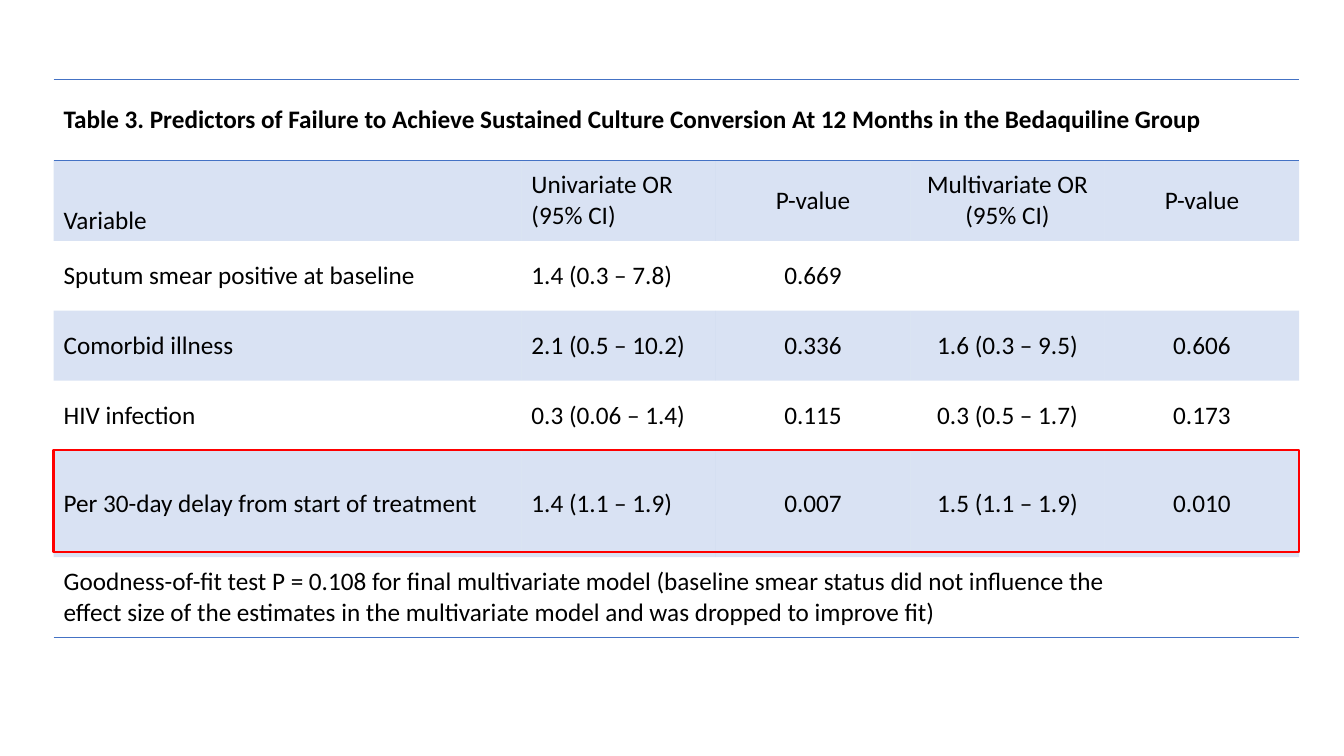
import dataclasses

import pptx
import pptx.dml.color
import pptx.enum.shapes
import pptx.enum.text
import pptx.oxml
import pptx.oxml.ns
import pptx.util

Cm = pptx.util.Cm
ALIGN = pptx.enum.text.PP_ALIGN
ANCHOR = pptx.enum.text.MSO_ANCHOR


@dataclasses.dataclass(frozen=True)
class Theme:
    font: str = "Calibri"
    size: int = 18
    text: str = "000000"
    accent: str = "4472C4"
    band_alpha: int = 20000
    highlight: str = "FF0000"
    rule_width: float = 1
    highlight_width: float = 1.5


THEME = Theme()
NO_STYLE = "{2D5ABB26-0587-4C30-8999-92F81FD0307C}"

LEFT, TOP = 1.35, 2.01
COLUMN_WIDTHS = [11.79] + [4.9] * 4
ROW_HEIGHTS = [2.03, 2.03, 1.76, 1.76, 1.76, 2.69, 2.03]
CENTERED_FROM = 2

ROWS = [
    ["Table 3. Predictors of Failure to Achieve Sustained Culture Conversion "
     "At 12 Months in the Bedaquiline Group"],
    ["Variable", "Univariate OR\n(95% CI)", "P-value",
     "Multivariate OR\n(95% CI)", "P-value"],
    ["Sputum smear positive at baseline", "1.4 (0.3 – 7.8)", "0.669", "", ""],
    ["Comorbid illness", "2.1 (0.5 – 10.2)", "0.336", "1.6 (0.3 – 9.5)", "0.606"],
    ["HIV infection", "0.3 (0.06 – 1.4)", "0.115", "0.3 (0.5 – 1.7)", "0.173"],
    ["Per 30-day delay from start of treatment", "1.4 (1.1 – 1.9)", "0.007",
     "1.5 (1.1 – 1.9)", "0.010"],
    ["Goodness-of-fit test P = 0.108 for final multivariate model "
     "(baseline smear status did not influence the\n"
     "effect size of the estimates in the multivariate model "
     "and was dropped to improve fit)"],
]
TITLE_ROW, HEADER_ROW, DELAY_ROW, NOTE_ROW = 0, 1, 5, 6


def color(value):
    return pptx.dml.color.RGBColor.from_string(value)


def write_cell(cell, text, alignment, bold):
    cell.vertical_anchor = ANCHOR.MIDDLE
    cell.text_frame.text = text
    for paragraph in cell.text_frame.paragraphs:
        paragraph.alignment = alignment
        paragraph.font.size = pptx.util.Pt(THEME.size)
        for run in paragraph.runs:
            run.font.name = THEME.font
            run.font.size = pptx.util.Pt(THEME.size)
            run.font.bold = bold
            run.font.color.rgb = color(THEME.text)


def fill_cell(cell, banded):
    if not banded:
        cell.fill.background()
        return
    cell.fill.solid()
    cell.fill.fore_color.rgb = color(THEME.accent)
    properties = cell._tc.get_or_add_tcPr()
    srgb = properties.find(".//" + pptx.oxml.ns.qn("a:srgbClr"))
    alpha = pptx.oxml.parse_xml(
        f'<a:alpha {pptx.oxml.ns.nsdecls("a")} val="{THEME.band_alpha}"/>')
    srgb.append(alpha)


def rule_cell(cell, sides):
    """Draw borders on the given sides, listed in schema order (T, B)."""
    properties = cell._tc.get_or_add_tcPr()
    width = pptx.util.Pt(THEME.rule_width)
    for position, side in enumerate(sides):
        border = pptx.oxml.parse_xml(
            f'<a:ln{side} {pptx.oxml.ns.nsdecls("a")} w="{width}"><a:solidFill>'
            f'<a:srgbClr val="{THEME.accent}"/></a:solidFill></a:ln{side}>')
        properties.insert(position, border)


def add_predictor_table(slide):
    frame = slide.shapes.add_table(
        len(ROW_HEIGHTS), len(COLUMN_WIDTHS), Cm(LEFT), Cm(TOP),
        Cm(sum(COLUMN_WIDTHS)), Cm(sum(ROW_HEIGHTS)))
    table = frame.table
    table.first_row = table.horz_banding = False
    table._tbl.tblPr.find(pptx.oxml.ns.qn("a:tableStyleId")).text = NO_STYLE
    for column, width in zip(table.columns, COLUMN_WIDTHS):
        column.width = Cm(width)
    for row, height in zip(table.rows, ROW_HEIGHTS):
        row.height = Cm(height)

    # Texts and bands on every second row
    for row_index, texts in enumerate(ROWS):
        for column_index, text in enumerate(texts):
            cell = table.cell(row_index, column_index)
            centered = column_index >= CENTERED_FROM
            write_cell(cell, text, ALIGN.CENTER if centered else ALIGN.LEFT,
                       row_index == TITLE_ROW)
            fill_cell(cell, row_index % 2 == 1)
    table.cell(HEADER_ROW, 0).vertical_anchor = ANCHOR.BOTTOM

    # Full-width rows with rules
    last_column = len(COLUMN_WIDTHS) - 1
    for row_index, sides in ((TITLE_ROW, "TB"), (NOTE_ROW, "B")):
        table.cell(row_index, 0).merge(table.cell(row_index, last_column))
        for column_index in range(last_column + 1):
            rule_cell(table.cell(row_index, column_index), sides)


def add_highlight(slide):
    top = TOP + sum(ROW_HEIGHTS[:DELAY_ROW])
    shape = slide.shapes.add_shape(
        pptx.enum.shapes.MSO_SHAPE.RECTANGLE, Cm(LEFT), Cm(top),
        Cm(sum(COLUMN_WIDTHS)), Cm(2.57))
    shape.shadow.inherit = False
    shape.fill.background()
    shape.line.color.rgb = color(THEME.highlight)
    shape.line.width = pptx.util.Pt(THEME.highlight_width)


def main():
    presentation = pptx.Presentation()
    presentation.slide_width = Cm(33.87)
    presentation.slide_height = Cm(19.05)
    # The heading is a table row, so the blank layout fits
    slide = presentation.slides.add_slide(presentation.slide_layouts[6])
    add_predictor_table(slide)
    add_highlight(slide)
    presentation.save("out.pptx")


if __name__ == "__main__":
    main()
